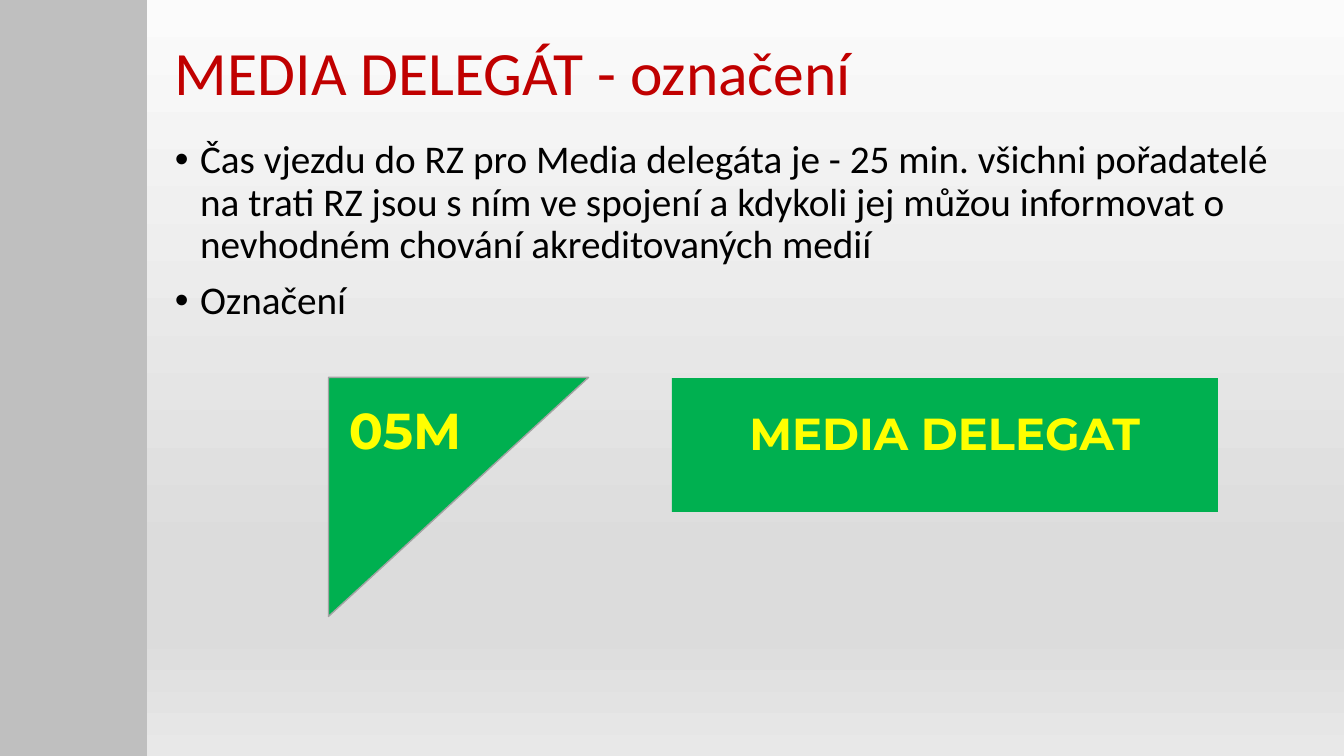
from lxml import etree
from pptx import Presentation
from pptx import util as u
from pptx.dml.color import RGBColor
from pptx.enum import shapes, text
from pptx.oxml import ns

PX = 914400 / 100.8
GREEN, YELLOW = "00B050", "FFFF00"


def px(*lengths):
    return [u.Emu(round(length * PX)) for length in lengths]


def color(value):
    return RGBColor.from_string(value)


def add_element(parent, tag, **attributes):
    return etree.SubElement(parent, ns.qn(tag), attributes)


def paint_background(page, stops):
    fill = page.background.fill
    fill.gradient()
    gradient = page.background._cSld.find(".//" + ns.qn("a:gradFill"))
    for child in list(gradient):
        gradient.remove(child)
    stop_list = add_element(gradient, "a:gsLst")
    for percent, value in stops:
        stop = add_element(stop_list, "a:gs", pos=str(percent * 1000))
        add_element(stop, "a:srgbClr", val=value)
    add_element(gradient, "a:lin", ang="5400000", scaled="0")


def add_block(page, kind, place, fill, line=None, rotation=0):
    block = page.shapes.add_shape(kind, *px(*place))
    block.shadow.inherit = False
    block.rotation = rotation
    block.fill.solid()
    block.fill.fore_color.rgb = color(fill)
    if line:
        block.line.color.rgb = color(line)
        block.line.width = u.Pt(1)
    else:
        block.line.fill.background()
    return block


def write(box, lines, font, size, ink, bold=False, bullets=False,
          spacing=1, align=text.PP_ALIGN.LEFT):
    frame = box.text_frame
    frame.word_wrap = True
    frame.vertical_anchor = text.MSO_ANCHOR.TOP
    frame.text = "\n".join(lines)
    for index, para in enumerate(frame.paragraphs):
        para.alignment = align
        para.line_spacing = spacing
        if bullets:
            para.space_before = u.Pt(10 if index else 0)
            properties = para._p.get_or_add_pPr()
            properties.set("marL", "228600")
            properties.set("indent", "-228600")
            add_element(properties, "a:buFont", typeface="Arial")
            add_element(properties, "a:buChar", char="•")
        for span in para.runs:
            span.font.name = font
            span.font.size = u.Pt(size)
            span.font.bold = bold
            span.font.color.rgb = color(ink)


def add_text(page, place, lines, *style, **options):
    write(page.shapes.add_textbox(*px(*place)), lines, *style, **options)


def main():
    deck = Presentation()
    deck.slide_width, deck.slide_height = px(1344, 756)
    page = deck.slides.add_slide(deck.slide_layouts[6])
    paint_background(page, [(0, "FBFBFB"), (74, "DCDCDC"),
                            (83, "DCDCDC"), (100, "E8E8E8")])
    preset = shapes.MSO_SHAPE
    add_block(page, preset.RECTANGLE, (0, 0, 147, 756), "BFBFBF")
    add_text(page, (165, 37, 1159, 146), ["MEDIA DELEGÁT - označení"],
             "Calibri", 44, "C00000", spacing=0.9)
    add_text(page, (165, 135, 1159, 600), [
        "Čas vjezdu do RZ pro Media delegáta je - 25 min. všichni pořadatelé "
        "na trati RZ jsou s ním ve spojení a kdykoli jej můžou informovat o "
        "nevhodném chování akreditovaných medií",
        "Označení",
    ], "Calibri", 28, "000000", bullets=True, spacing=0.9)
    add_block(page, preset.RIGHT_TRIANGLE, (339, 367, 239, 260), GREEN,
              line="A3A3A3", rotation=90)
    add_text(page, (339, 394, 142, 72), ["05M"],
             "Montserrat", 36, YELLOW, bold=True)
    sign = add_block(page, preset.RECTANGLE, (672, 378, 546, 134), GREEN)
    write(sign, ["MEDIA DELEGAT"], "Montserrat", 32, YELLOW, bold=True,
          align=text.PP_ALIGN.CENTER)
    sign.text_frame.margin_top, sign.text_frame.margin_bottom = px(28, 39)
    deck.save("out.pptx")


if __name__ == "__main__":
    main()
